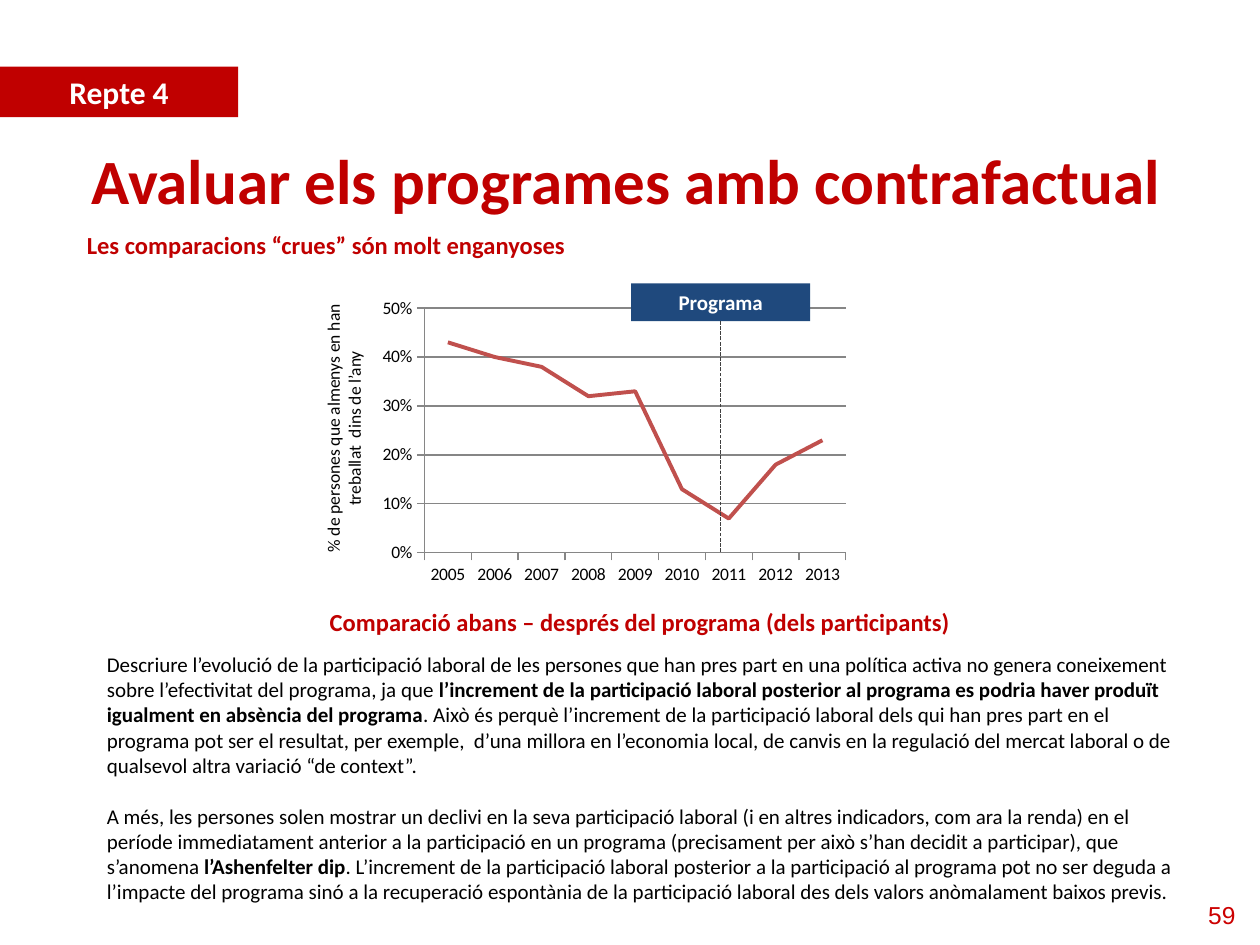
from lxml import etree
from pptx import Presentation
from pptx.chart.data import CategoryChartData
from pptx.dml.color import RGBColor
from pptx.enum.chart import XL_CHART_TYPE, XL_TICK_MARK
from pptx.enum.dml import MSO_LINE
from pptx.enum.shapes import MSO_CONNECTOR, MSO_SHAPE
from pptx.enum.text import MSO_ANCHOR, PP_ALIGN
from pptx.oxml.ns import qn
from pptx.util import Inches, Pt

LINE_CHART = XL_CHART_TYPE.LINE
TICK_OUT, TICK_NONE = XL_TICK_MARK.OUTSIDE, XL_TICK_MARK.NONE
DASH = MSO_LINE.SQUARE_DOT
STRAIGHT, RECTANGLE = MSO_CONNECTOR.STRAIGHT, MSO_SHAPE.RECTANGLE
TOP, MIDDLE = MSO_ANCHOR.TOP, MSO_ANCHOR.MIDDLE
LEFT, CENTER = PP_ALIGN.LEFT, PP_ALIGN.CENTER

RED = RGBColor(0xC0, 0x00, 0x00)
NUMBER_RED = RGBColor(0xCC, 0x00, 0x00)
NAVY = RGBColor(0x1F, 0x49, 0x7D)
SERIES_RED = RGBColor(0xC0, 0x50, 0x4D)
AXIS_GRAY = RGBColor(0x86, 0x86, 0x86)
MARKER_GRAY = RGBColor(0x40, 0x40, 0x40)
BLACK = RGBColor(0x00, 0x00, 0x00)
WHITE = RGBColor(0xFF, 0xFF, 0xFF)

COLUMNS, ROWS = 100, 75
PROGRAM_X = 57.2

EMPLOYMENT = dict(zip(range(2005, 2014),
                      (0.43, 0.4, 0.38, 0.32, 0.33, 0.13, 0.07, 0.18, 0.23)))

CONTEXT = (
    ("Descriure l’evolució de la participació laboral de les persones que han pres part en una "
     "política activa no genera coneixement sobre l’efectivitat del programa, ja que ", False),
    ("l’increment de la participació laboral posterior al programa es podria haver produït "
     "igualment en absència del programa", True),
    (". Això és perquè l’increment de la participació laboral dels qui han pres part en el "
     "programa pot ser el resultat, per exemple,  d’una millora en l’economia local, de canvis "
     "en la regulació del mercat laboral o de qualsevol altra variació “de context”.", False),
)
ASHENFELTER = (
    ("A més, les persones solen mostrar un declivi en la seva participació laboral (i en altres "
     "indicadors, com ara la renda) en el període immediatament anterior a la participació en un "
     "programa (precisament per això s’han decidit a participar), que s’anomena ", False),
    ("l’Ashenfelter dip", True),
    (". L’increment de la participació laboral posterior a la participació al programa pot no "
     "ser deguda a l’impacte del programa sinó a la recuperació espontània de la participació "
     "laboral des dels valors anòmalament baixos previs.", False),
)


class SlideBuilder:
    """Holds the style and the current slide, and adds elements on a grid."""

    def __init__(self, deck, font="Calibri"):
        self.font = font
        self.column = deck.slide_width / COLUMNS
        self.row = deck.slide_height / ROWS
        self.slide = deck.slides.add_slide(deck.slide_layouts[6])

    def place(self, x, y, *size):
        units = (self.column, self.row) * 2
        return [int(value * unit) for value, unit in zip((x, y, *size), units)]

    def style(self, paragraph, size, color, bold=None, align=LEFT, font=None):
        paragraph.alignment = align
        paragraph.font.name = font or self.font
        paragraph.font.size = Pt(size)
        paragraph.font.color.rgb = color
        paragraph.font.bold = bold

    def text(self, area, words, size, color, bold=None, align=LEFT, font=None,
             anchor=TOP, rotation=0):
        box = self.slide.shapes.add_textbox(*self.place(*area))
        box.rotation = rotation
        frame = box.text_frame
        frame.word_wrap = True
        frame.vertical_anchor = anchor
        frame.text = words
        self.style(frame.paragraphs[0], size, color, bold, align, font)
        return frame

    def add_paragraph(self, frame, pieces, size, color, gap):
        paragraph = frame.add_paragraph()
        self.style(paragraph, size, color)
        paragraph.space_before = Pt(gap)
        for words, bold in pieces:
            run = paragraph.add_run()
            run.text = words
            run.font.bold = bold

    def label(self, area, words, size, fill):
        tag = self.slide.shapes.add_shape(RECTANGLE, *self.place(*area))
        tag.shadow.inherit = False
        tag.fill.solid()
        tag.fill.fore_color.rgb = fill
        tag.line.fill.background()
        tag.text_frame.text = words
        tag.text_frame.vertical_anchor = MIDDLE
        self.style(tag.text_frame.paragraphs[0], size, WHITE, True, CENTER)
        return tag

    def marker(self, x, bottom, tag):
        line = self.slide.shapes.add_connector(
            STRAIGHT, *self.place(x, bottom), *self.place(x, bottom))
        line.end_connect(tag, 2)
        line.line.color.rgb = MARKER_GRAY
        line.line.width = Pt(0.75)
        line.line.dash_style = DASH
        etree.SubElement(line._element.spPr, qn("a:effectLst"))

    def line_chart(self, area, values, size, color):
        data = CategoryChartData(number_format="0%")
        data.categories = [str(year) for year in values]
        data.add_series("Series 1", values.values())
        chart = self.slide.shapes.add_chart(LINE_CHART, *self.place(*area), data).chart
        chart.has_legend = chart.has_title = False
        chart.font.name = self.font
        chart.font.size = Pt(size)
        chart.font.color.rgb = BLACK
        chart.plots[0].vary_by_categories = False
        series = chart.plots[0].series[0]
        series.smooth = False
        series.format.line.color.rgb = color
        series.format.line.width = Pt(2.25)
        shares = chart.value_axis
        shares.minimum_scale, shares.maximum_scale, shares.major_unit = 0, 0.5, 0.1
        shares.tick_labels.number_format = "0%"
        shares.tick_labels.number_format_is_linked = False
        shares.has_major_gridlines = True
        for axis in (shares, chart.category_axis):
            axis.major_tick_mark, axis.minor_tick_mark = TICK_OUT, TICK_NONE
        for part in (shares, chart.category_axis, shares.major_gridlines):
            part.format.line.color.rgb = AXIS_GRAY
            part.format.line.width = Pt(0.75)


def main():
    deck = Presentation()
    deck.slide_width, deck.slide_height = Inches(10), Inches(7.5)
    page = SlideBuilder(deck)

    page.text((94.9, 70.9, 5.1, 3.4), "59", 14, NUMBER_RED, font="Arial")
    page.line_chart((29.6, 23.2, 38.3, 23.7), EMPLOYMENT, 10, SERIES_RED)
    page.text((14.3, 31.8, 26, 4.4),
              "% de persones que almenys en han treballat  dins de l’any",
              10, BLACK, align=CENTER, rotation=270)
    program = page.label((50.1, 22.5, 14.2, 3), "Programa", 12, NAVY)
    page.marker(PROGRAM_X, 43.8, program)

    body = page.text((7.5, 47.7, 86.6, 17.3),
                     "Comparació abans – després del programa (dels participants)",
                     14, RED, True, CENTER)
    page.add_paragraph(body, CONTEXT, 12, BLACK, 8.5)
    page.add_paragraph(body, ASHENFELTER, 12, BLACK, 14.6)

    page.text((5.9, 17.8, 91.5, 17.3), "Les comparacions “crues” són molt enganyoses",
              14, RED, True)
    page.text((0, 10.7, 99.4, 7.1), "Avaluar els programes amb contrafactual",
              36, RED, True, CENTER, anchor=MIDDLE)
    page.label((0, 5.3, 18.9, 4), "Repte 4", 18, RED)

    deck.save("out.pptx")


if __name__ == "__main__":
    main()
